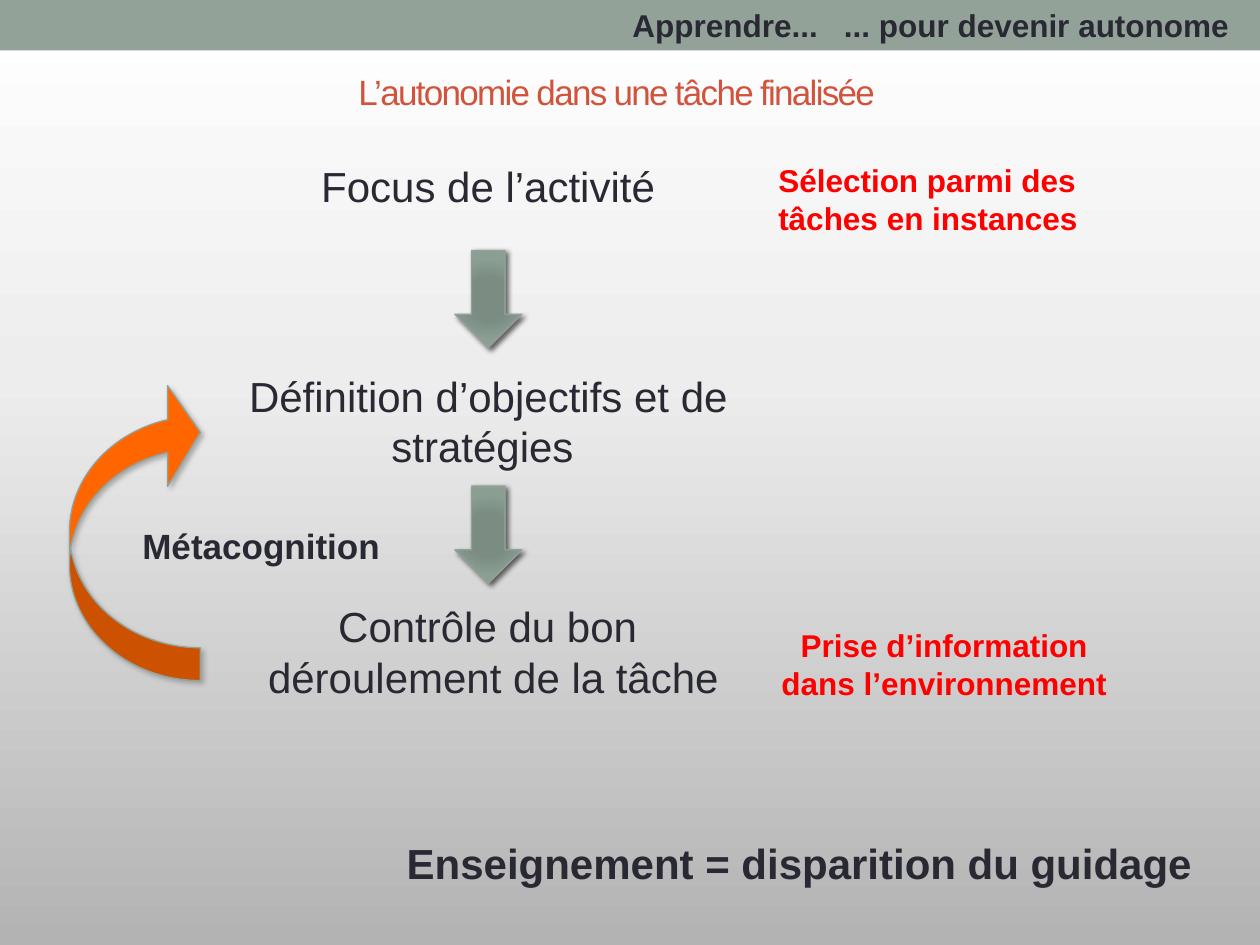
"""Build the slide on autonomy in a goal-directed task."""
from dataclasses import dataclass
from typing import Optional

from lxml.etree import SubElement
from pptx import Presentation
from pptx.dml.color import RGBColor
from pptx.enum.shapes import MSO_SHAPE
from pptx.enum.text import MSO_ANCHOR, MSO_AUTO_SIZE, PP_ALIGN
from pptx.oxml.ns import qn
from pptx.util import Cm, Pt

INK, RED, SAGE, WHITE = "292934", "FF0000", "93A299", "FFFFFF"
ORANGE, TITLE = "FF6600", "D2533C"
LEFT, CENTER = PP_ALIGN.LEFT, PP_ALIGN.CENTER
BACKDROP = [(0, WHITE), (40, "EDEDED"), (100, "B3B3B3")]
ARROW_FILL = [(0, "7B8E82"), (34, "7B8D83"), (70, "8A9E92"), (100, SAGE)]


@dataclass
class Label:
    text: str
    left: float
    top: float
    width: float
    height: float
    size: int = 24
    color: str = INK
    bold: bool = False
    align: PP_ALIGN = CENTER
    wrap: bool = True
    anchor: MSO_ANCHOR = MSO_ANCHOR.TOP
    spacing: int = 0


@dataclass
class Block:
    kind: MSO_SHAPE
    left: float
    top: float
    width: float
    height: float
    fill: Optional[str] = None
    shadow: Optional[str] = None


LABELS = [
    Label("L’autonomie dans une tâche finalisée", 5.94, 1.19, 12.98, 1.3, 20, TITLE,
          anchor=MSO_ANCHOR.MIDDLE, spacing=-100),
    Label("Focus de l’activité", 2.54, 3.12, 14.6, 1.28),
    Label("Définition d’objectifs et de stratégies ", 3.89, 7.34, 11.91, 2.31),
    Label("Contrôle du bon\n déroulement de la tâche", 3.2, 11.99, 13.26, 2.31),
    Label("Sélection parmi des tâches en instances", 15.44, 3.12, 7.19, 1.8, 18, RED, True, LEFT),
    Label("Prise d’information dans l’environnement", 15.44, 12.5, 7.19, 1.8, 18, RED, True),
    Label("Enseignement = disparition du guidage", 7.95, 16.76, 16.79, 1.3, 24, INK, True, LEFT),
    Label("Métacognition", 2.62, 10.44, 5.33, 1.12, 20, INK, True, LEFT, wrap=False),
    Label("Apprendre...   ... pour devenir autonome", 12.5, 0, 12.9, 1.02, 18, INK, True, LEFT),
]
BANDS = [
    Block(MSO_SHAPE.RECTANGLE, 0, 0.61, 25.4, 0.64, WHITE),
    Block(MSO_SHAPE.RECTANGLE, 0, 0, 25.4, 1.02, SAGE),
]
STEP_ARROWS = [Block(MSO_SHAPE.DOWN_ARROW, 9.17, top, 1.35, 1.96, shadow="000000")
               for top in (5.05, 9.8)]
LOOP_ARROW = Block(MSO_SHAPE.CURVED_RIGHT_ARROW, 1.4, 7.7, 2.64, 6.02, ORANGE, "808080")


def rgb(value: str) -> RGBColor:
    return RGBColor.from_string(value)


def set_stops(grad, stops: list) -> None:
    gs_list = grad.find(qn("a:gsLst"))
    for gs in list(gs_list):
        gs_list.remove(gs)
    for position, color in stops:
        gs = SubElement(gs_list, qn("a:gs"), pos=str(position * 1000))
        SubElement(gs, qn("a:srgbClr"), val=color)


def set_radial(grad) -> None:
    grad.remove(grad.find(qn("a:lin")))
    radial = SubElement(grad, qn("a:path"), {"path": "circle"})
    SubElement(radial, qn("a:fillToRect"), {side: "100000" for side in "ltrb"})


def add_shadow(sp, color: str) -> None:
    effects = next(sp._element.iter(qn("a:effectLst")))
    outer = SubElement(effects, qn("a:outerShdw"), blurRad=str(Pt(3)), dist=str(Pt(2)),
                       dir="2700000", rotWithShape="0")
    clr = SubElement(outer, qn("a:srgbClr"), val=color)
    SubElement(clr, qn("a:alpha"), val="60000")


def add_block(s, block: Block):
    sp = s.shapes.add_shape(block.kind, Cm(block.left), Cm(block.top),
                            Cm(block.width), Cm(block.height))
    sp.shadow.inherit = False
    if block.fill:
        sp.fill.solid()
        sp.fill.fore_color.rgb = rgb(block.fill)
    else:
        sp.fill.gradient()
        grad = next(sp._element.iter(qn("a:gradFill")))
        set_stops(grad, ARROW_FILL)
        set_radial(grad)
    if block.shadow:
        sp.line.color.rgb = rgb(SAGE)
        sp.line.width = Pt(0.75)
        add_shadow(sp, block.shadow)
    else:
        sp.line.fill.background()
    return sp


def add_label(s, label: Label) -> None:
    sp = s.shapes.add_textbox(Cm(label.left), Cm(label.top), Cm(label.width), Cm(label.height))
    tf = sp.text_frame
    tf.text = label.text
    tf.word_wrap = label.wrap
    tf.vertical_anchor = label.anchor
    tf.auto_size = MSO_AUTO_SIZE.NONE if label.spacing else MSO_AUTO_SIZE.SHAPE_TO_FIT_TEXT
    for p in tf.paragraphs:
        p.alignment = label.align
        for r in p.runs:
            r.font.name = "Arial"
            r.font.size = Pt(label.size)
            r.font.bold = label.bold
            r.font.color.rgb = rgb(label.color)
            if label.spacing:
                r.font._element.set("spc", str(label.spacing))


def main() -> None:
    prs = Presentation()
    prs.slide_width, prs.slide_height = Cm(25.4), Cm(19.05)
    s = prs.slides.add_slide(prs.slide_layouts[6])
    fill = s.background.fill
    fill.gradient()
    fill.gradient_angle = 270
    set_stops(next(s._element.iter(qn("a:gradFill"))), BACKDROP)
    for block in BANDS + STEP_ARROWS:
        add_block(s, block)
    loop = add_block(s, LOOP_ARROW)
    loop.adjustments[1] = 0.77
    loop._element.spPr.find(qn("a:xfrm")).set("flipV", "1")
    for label in LABELS:
        add_label(s, label)
    prs.save("out.pptx")


if __name__ == "__main__":
    main()
